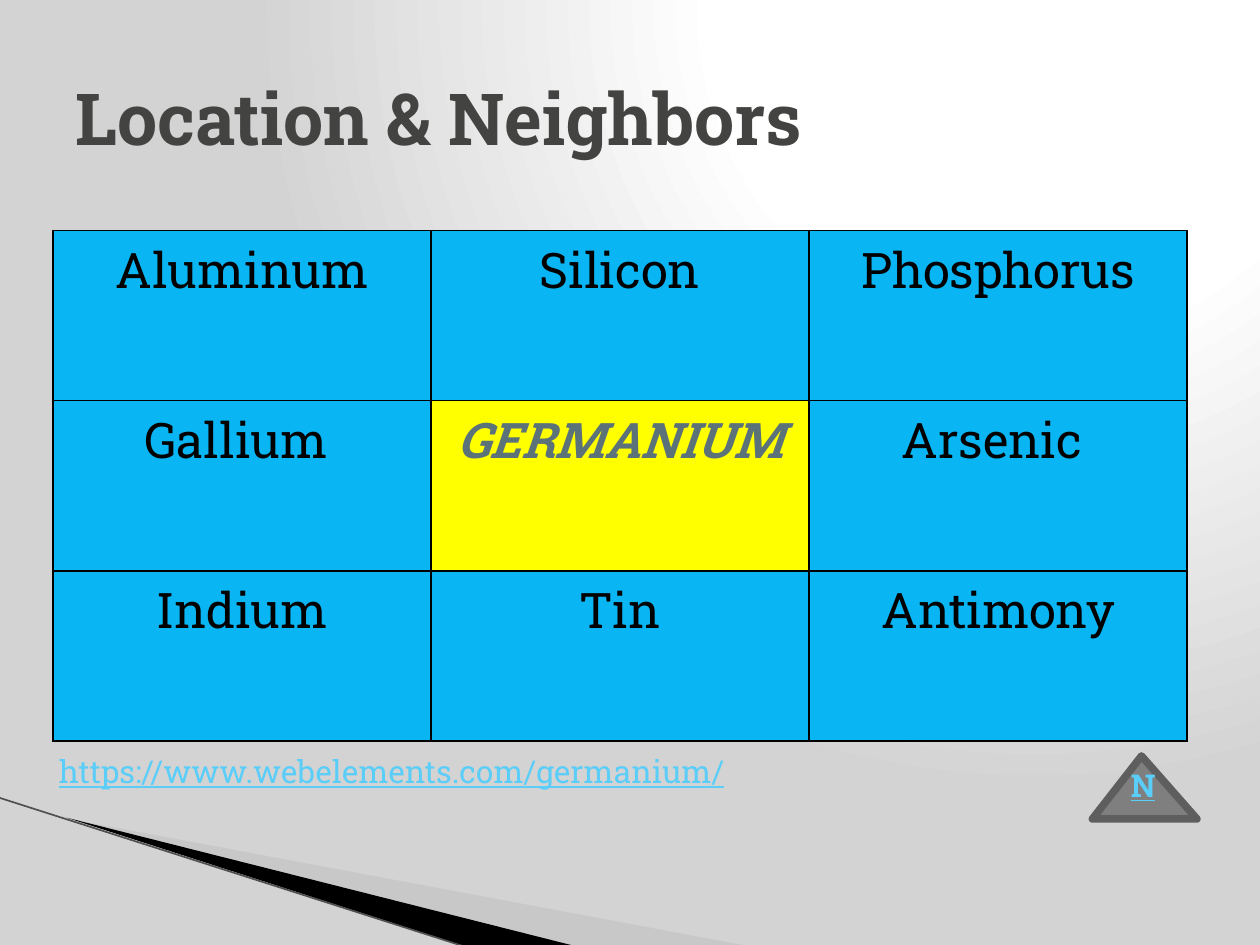
from dataclasses import dataclass

from lxml.etree import SubElement
from pptx import Presentation
from pptx.dml.color import RGBColor
from pptx.enum.shapes import MSO_CONNECTOR, MSO_SHAPE
from pptx.enum.text import MSO_ANCHOR as Anchor, PP_ALIGN as Align
from pptx.oxml import parse_xml
from pptx.oxml.ns import nsdecls, qn
from pptx.util import Inches, Pt

WIDTH, HEIGHT = 10, 7.5
ELEMENTS = [
    ["Aluminum", "Silicon", "Phosphorus"],
    ["Gallium ", "GERMANIUM", "Arsenic "],
    ["Indium", "Tin", "Antimony"],
]
FOCUS = "GERMANIUM"


@dataclass(frozen=True)
class Theme:
    font: str = "Roboto Slab"
    title_size: float = 41
    cell_size: float = 28
    link_size: float = 18
    title: str = "434342"
    text: str = "000000"
    focus_text: str = "5B7378"
    link: str = "5ACEF8"
    cell: str = "0AB5F3"
    focus_cell: str = "FFFF00"
    border: str = "000000"
    light: str = "FFFFFF"
    shade: str = "D3D3D3"
    pale_wedge: str = "B9B9B9"
    dark_wedge: str = "000000"
    hairline: str = "505050"
    button: str = "7F7F7F"
    button_edge: str = "5E5E5E"


THEME = Theme()


def rgb(color):
    return RGBColor.from_string(color)


def inches(*values):
    return [Inches(value) for value in values]


def style(paragraph, size, color, bold=False, italic=False, underline=False,
          align=Align.LEFT):
    paragraph.alignment = align
    font = paragraph.font
    font.name, font.size = THEME.font, Pt(size)
    font.bold, font.italic, font.underline = bold, italic, underline
    font.color.rgb = rgb(color)


def paint_background(slide):
    """Fill the background with a radial gradient centred at the top right."""
    stops = "".join(
        f'<a:gs pos="{share * 1000}"><a:srgbClr val="{color}"/></a:gs>'
        for share, color in ((0, THEME.light), (40, THEME.light), (100, THEME.shade)))
    background = parse_xml(
        f'<p:bg {nsdecls("p", "a")}><p:bgPr><a:gradFill rotWithShape="1">'
        f'<a:gsLst>{stops}</a:gsLst><a:path path="circle">'
        '<a:fillToRect l="65000" t="0" r="0" b="98000"/></a:path></a:gradFill>'
        '<a:effectLst/></p:bgPr></p:bg>')
    slide.element.cSld.insert(0, background)


def add_wedge(slide, points, color, opacity=100):
    start, *corners = [inches(*point) for point in points]
    builder = slide.shapes.build_freeform(*start)
    builder.add_line_segments(corners, close=True)
    wedge = builder.convert_to_shape()
    wedge.shadow.inherit = False
    wedge.fill.solid()
    wedge.fill.fore_color.rgb = rgb(color)
    wedge.line.fill.background()
    if opacity < 100:
        fill_color = wedge._element.spPr.find(qn("a:solidFill"))[0]
        SubElement(fill_color, qn("a:alpha"), val=str(opacity * 1000))


def add_hairline(slide, start, end):
    line = slide.shapes.add_connector(
        MSO_CONNECTOR.STRAIGHT, *inches(*start, *end))
    line.line.color.rgb = rgb(THEME.hairline)
    line.line.width = Pt(0.95)
    SubElement(line._element.spPr, qn("a:effectLst"))


def add_button(slide, label):
    button = slide.shapes.add_shape(
        MSO_SHAPE.ISOSCELES_TRIANGLE, *inches(8.67, 6, 0.83, 0.5))
    button.adjustments[0] = 0.47
    button.shadow.inherit = False
    button.fill.solid()
    button.fill.fore_color.rgb = rgb(THEME.button)
    button.line.color.rgb = rgb(THEME.button_edge)
    button.line.width = Pt(4.33)
    frame = button.text_frame
    frame.margin_left = frame.margin_right = 0
    frame.margin_top, frame.margin_bottom = inches(-0.05, 0.24)
    frame.vertical_anchor = Anchor.MIDDLE
    frame.text = label
    style(frame.paragraphs[0], THEME.link_size, THEME.link, bold=True,
          underline=True, align=Align.CENTER)


def set_borders(cell):
    properties = cell._tc.get_or_add_tcPr()
    for index, side in enumerate(("lnL", "lnR", "lnT", "lnB")):
        properties.insert(index, parse_xml(
            f'<a:{side} {nsdecls("a")} w="{Pt(1)}"><a:solidFill>'
            f'<a:srgbClr val="{THEME.border}"/></a:solidFill></a:{side}>'))


def add_neighbor_table(slide):
    table = slide.shapes.add_table(
        len(ELEMENTS), len(ELEMENTS[0]), *inches(0.42, 1.83, 9, 4.05)).table
    for row, names in enumerate(ELEMENTS):
        for column, name in enumerate(names):
            focused = name == FOCUS
            cell = table.cell(row, column)
            cell.text = name
            cell.fill.solid()
            cell.fill.fore_color.rgb = rgb(THEME.focus_cell if focused else THEME.cell)
            set_borders(cell)
            style(cell.text_frame.paragraphs[0], THEME.cell_size,
                  THEME.focus_text if focused else THEME.text,
                  bold=focused, italic=focused, align=Align.CENTER)


def set_title(slide, text):
    title = slide.shapes.title
    title.left, title.top, title.width, title.height = inches(
        0.05 * WIDTH, 0.04 * HEIGHT, 0.9 * WIDTH, 1.25)
    title.text_frame.text = text
    title.text_frame.vertical_anchor = Anchor.MIDDLE
    style(title.text_frame.paragraphs[0], THEME.title_size, THEME.title, bold=True)


def add_address(slide, address):
    frame = slide.shapes.add_textbox(*inches(0.37, 5.92, 7.17, 0.4)).text_frame
    frame.word_wrap = True
    frame.text = address
    style(frame.paragraphs[0], THEME.link_size, THEME.link, underline=True)


def main():
    presentation = Presentation()
    presentation.slide_width, presentation.slide_height = inches(WIDTH, HEIGHT)
    slide = presentation.slides.add_slide(presentation.slide_layouts[5])
    paint_background(slide)
    add_wedge(slide, [(0.55, 6.5), (5.95, 7.51), (4.56, 7.51)], THEME.pale_wedge, opacity=40)
    add_wedge(slide, [(0.53, 6.49), (4.57, 7.51), (3.72, 7.52)], THEME.dark_wedge)
    add_hairline(slide, (-0.01, 6.33), (3.71, 7.52))
    add_button(slide, "N")
    add_neighbor_table(slide)
    set_title(slide, "Location & Neighbors")
    add_address(slide, "https://www.webelements.com/germanium/")
    presentation.save("out.pptx")


if __name__ == "__main__":
    main()
